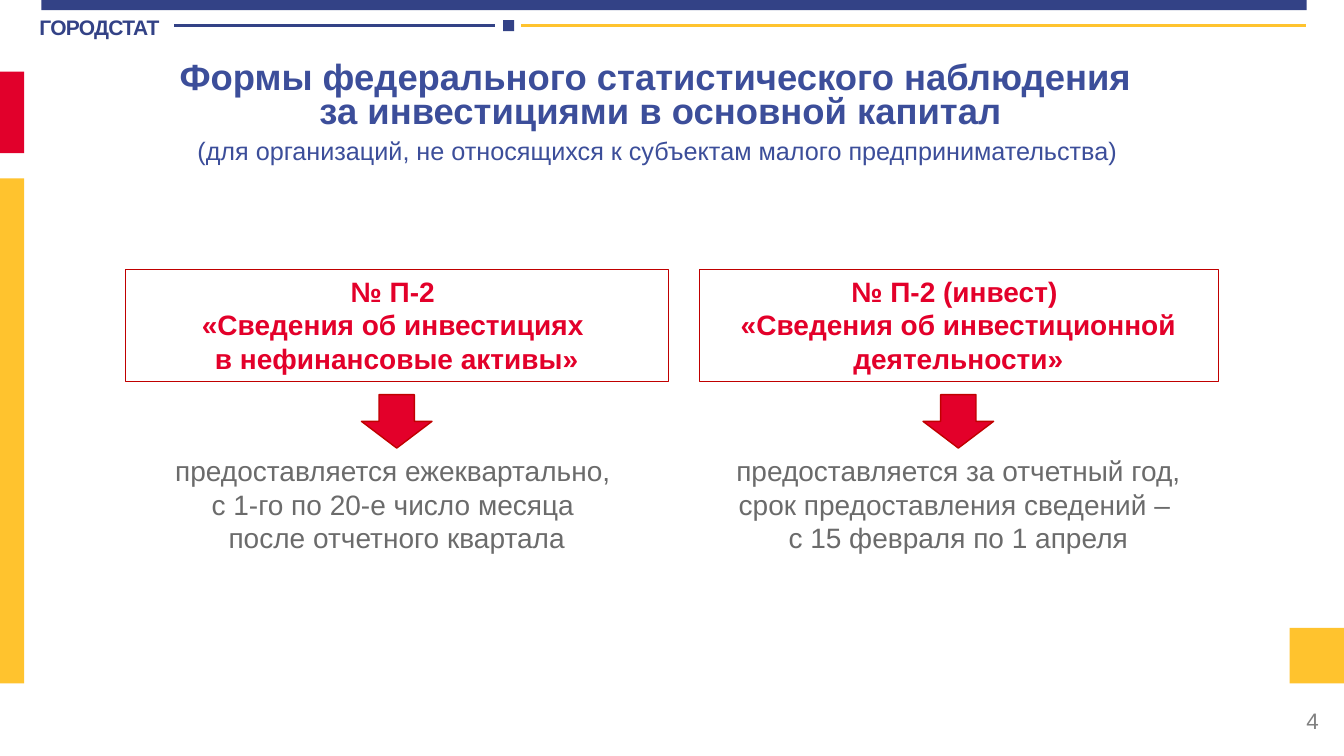
from pptx import Presentation
from pptx.dml.color import RGBColor
from pptx.enum.shapes import MSO_CONNECTOR, MSO_SHAPE
from pptx.enum.text import MSO_ANCHOR, PP_ALIGN
from pptx.util import Inches, Pt
from lxml import etree

RECTANGLE = MSO_SHAPE.RECTANGLE
DOWN_ARROW = MSO_SHAPE.DOWN_ARROW
STRAIGHT = MSO_CONNECTOR.STRAIGHT
TOP, MIDDLE = MSO_ANCHOR.TOP, MSO_ANCHOR.MIDDLE
LEFT, CENTER, RIGHT = PP_ALIGN.LEFT, PP_ALIGN.CENTER, PP_ALIGN.RIGHT

SLIDE_WIDTH, SLIDE_HEIGHT = Inches(13.33), Inches(7.5)
FONT = "Arial"
COLORS = {
    "navy": "334286",
    "title": "3C4E9A",
    "red": "E1002B",
    "form": "E3002A",
    "outline": "C00000",
    "yellow": "FFC32E",
    "text": "6B6B6B",
    "number": "808080",
}
DRAWING_NS = "http://schemas.openxmlformats.org/drawingml/2006/main"

FORM_TOP, NOTE_TOP, PANEL_HEIGHT = 35.6, 59.33, 14.8
ARROW_TOP, ARROW_WIDTH, ARROW_HEIGHT = 52.2, 5.25, 7.07
FORMS = [
    (9.3, 40.44,
     "№ П-2 \v«Сведения об инвестициях \vв нефинансовые активы»",
     "предоставляется ежеквартально, \vс 1-го по 20-е число месяца \vпосле отчетного квартала"),
    (51.99, 38.63,
     "№ П-2 (инвест) \v«Сведения об инвестиционной деятельности»",
     "предоставляется за отчетный год, срок предоставления сведений – \nс 15 февраля по 1 апреля"),
]


def across(percent):
    return round(SLIDE_WIDTH * percent / 100)


def down(percent):
    return round(SLIDE_HEIGHT * percent / 100)


def area(left, top, width, height):
    return across(left), down(top), across(width), down(height)


def color(name):
    return RGBColor.from_string(COLORS[name])


def format_run(run, size, tint, bold=False):
    run.font.name = FONT
    run.font.size = Pt(size)
    run.font.bold = bold
    run.font.color.rgb = color(tint)


def write(frame, text, size, tint, bold=False, align=CENTER, anchor=TOP):
    frame.text = text
    frame.word_wrap = True
    frame.vertical_anchor = anchor
    for paragraph in frame.paragraphs:
        paragraph.alignment = align
        for run in paragraph.runs:
            format_run(run, size, tint, bold)


def add_block(slide, bounds, fill=None, outline_width=0, preset=RECTANGLE):
    block = slide.shapes.add_shape(preset, *area(*bounds))
    block.shadow.inherit = False
    if fill:
        block.fill.solid()
        block.fill.fore_color.rgb = color(fill)
    else:
        block.fill.background()
    if outline_width:
        block.line.color.rgb = color("outline")
        block.line.width = Pt(outline_width)
    else:
        block.line.fill.background()
    return block


def add_label(slide, bounds, text, size, tint, **style):
    frame = slide.shapes.add_textbox(*area(*bounds)).text_frame
    write(frame, text, size, tint, **style)
    return frame


def add_rule(slide, start, end, tint):
    height = down(3.33)
    rule = slide.shapes.add_connector(STRAIGHT, across(start), height, across(end), height)
    rule.line.color.rgb = color(tint)
    rule.line.width = Pt(2)
    etree.SubElement(rule._element.spPr, f"{{{DRAWING_NS}}}effectLst")


def add_header(slide):
    agency = add_label(slide, (2.93, 1.73, 10.35, 3.6), "ГОРОДСТАТ", 15, "navy", bold=True, align=LEFT)
    agency.margin_left = agency.margin_right = agency.margin_bottom = 0
    agency.margin_top = Inches(0.01)
    agency.word_wrap = False
    agency.paragraphs[0].space_before = Pt(1)
    agency.paragraphs[0].runs[0]._r.get_or_add_rPr().set("spc", "-50")
    add_rule(slide, 12.98, 36.83, "navy")
    add_rule(slide, 38.76, 97.15, "yellow")
    add_block(slide, (37.43, 2.67, 0.83, 1.47), "navy")


def add_decoration(slide):
    add_block(slide, (3.08, 0, 94.15, 1.33), "navy")
    add_block(slide, (0, 9.47, 1.8, 10.8), "red")
    add_block(slide, (0, 23.6, 1.8, 66.8), "yellow")
    add_block(slide, (95.95, 83.07, 4.05, 7.33), "yellow")


def fill_title(slide):
    title = slide.shapes.title
    title.left, title.top, title.width, title.height = area(2.4, 7.87, 93.55, 15.87)
    write(
        title.text_frame,
        "Формы федерального статистического наблюдения \v"
        "за инвестициями в основной капитал\v"
        "(для организаций, не относящихся к субъектам малого предпринимательства) ",
        26, "title", bold=True,
    )
    heading = title.text_frame.paragraphs[0]
    heading.line_spacing = Pt(24)
    heading.space_before = Pt(10)
    format_run(heading.runs[-1], 18, "title")


def add_form(slide, left, width, name, deadline):
    form = add_block(slide, (left, FORM_TOP, width, PANEL_HEIGHT), outline_width=0.25)
    write(form.text_frame, name, 20, "form", bold=True)
    arrow_left = left + (width - ARROW_WIDTH) / 2
    add_block(slide, (arrow_left, ARROW_TOP, ARROW_WIDTH, ARROW_HEIGHT), "form", 1, DOWN_ARROW)
    add_label(slide, (left, NOTE_TOP, width, PANEL_HEIGHT), deadline, 20, "text")


def main():
    deck = Presentation()
    deck.slide_width, deck.slide_height = SLIDE_WIDTH, SLIDE_HEIGHT
    slide = deck.slides.add_slide(deck.slide_layouts[5])
    add_decoration(slide)
    add_header(slide)
    fill_title(slide)
    for form in FORMS:
        add_form(slide, *form)
    add_label(slide, (76.37, 92.67, 22.5, 5.33), "4", 16, "number", align=RIGHT, anchor=MIDDLE)
    deck.save("out.pptx")


if __name__ == "__main__":
    main()
